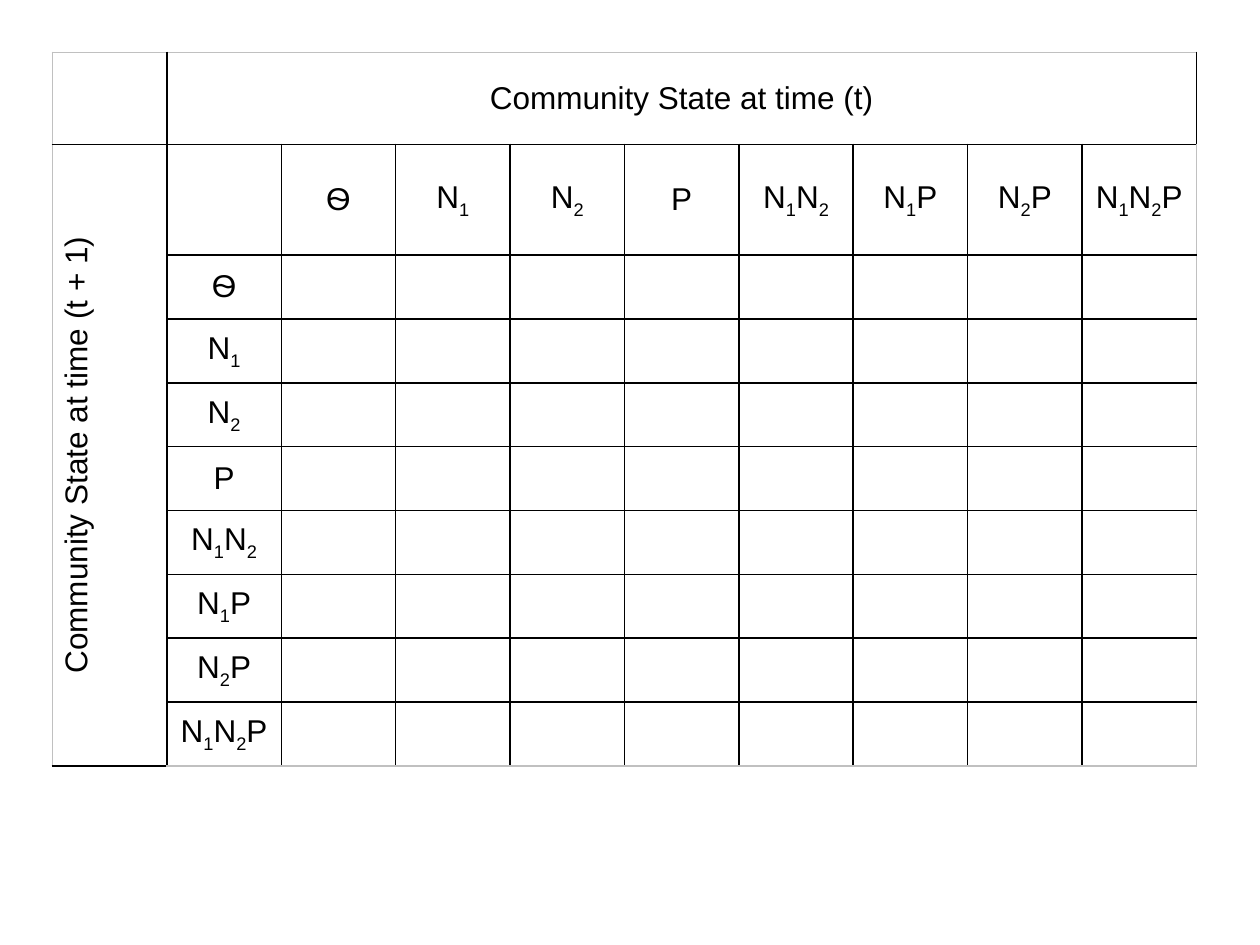
"""Builds a slide with an empty community state transition table."""
from lxml import etree
from pptx import Presentation, util as u
from pptx.dml.color import RGBColor
from pptx.enum import text
from pptx.oxml import ns

COLORS = {"ink": "000000", "frame": "C0C0C0"}
STATES = ["Ѳ", "N1", "N2", "P", "N1N2", "N1P", "N2P", "N1N2P"]
COL_WIDTH = 65.38
ROW_HEIGHTS = [52.5, 63.3] + [36.5] * len(STATES)


def write_cell(cell, label):
    """Write a centred label, setting its digits as subscripts when it is a state."""
    cell.vertical_anchor = text.MSO_ANCHOR.MIDDLE
    p = cell.text_frame.paragraphs[0]
    p.alignment = text.PP_ALIGN.CENTER
    for part in label if label in STATES else [label]:
        r = p.add_run()
        r.text = part
        if part.isdigit():
            r._r.get_or_add_rPr().set("baseline", "-25000")
    p.font.size = u.Pt(18)
    p.font.name = "Arial"
    p.font.color.rgb = RGBColor.from_string(COLORS["ink"])


def set_borders(cell, edges):
    """Draw the four borders of a cell, with the frame colour on the outer edges."""
    tc_pr = cell._tc.get_or_add_tcPr()
    for i, (side, outer) in enumerate(edges.items()):
        ln = etree.Element(ns.qn(f"a:ln{side}"), w=str(u.Pt(1)))
        fill = etree.SubElement(ln, ns.qn("a:solidFill"))
        color = COLORS["frame" if outer else "ink"]
        etree.SubElement(fill, ns.qn("a:srgbClr"), val=color)
        tc_pr.insert(i, ln)


def add_grid(s):
    """Add the unfilled, bordered table and return it."""
    rows, cols = len(ROW_HEIGHTS), len(STATES) + 2
    table = s.shapes.add_table(rows, cols, u.Pt(30), u.Pt(30),
                               u.Pt(COL_WIDTH * cols), u.Pt(sum(ROW_HEIGHTS))).table
    table.first_row = table.horz_banding = False
    for column in table.columns:
        column.width = u.Pt(COL_WIDTH)
    for row, height in zip(table.rows, ROW_HEIGHTS):
        row.height = u.Pt(height)
    for i in range(rows):
        for j in range(cols):
            cell = table.cell(i, j)
            cell.fill.background()
            set_borders(cell, {"L": j == 0, "R": j == cols - 1,
                               "T": i == 0, "B": i == rows - 1})
    return table


def fill_headers(table):
    """Merge and label the two axis headers, then label the states on both axes."""
    last_row, last_col = len(table.rows) - 1, len(table.columns) - 1
    across, down = table.cell(0, 1), table.cell(1, 0)
    across.merge(table.cell(0, last_col))
    down.merge(table.cell(last_row, 0))
    write_cell(across, "Community State at time (t)")
    write_cell(down, "Community State at time (t + 1)")
    down._tc.get_or_add_tcPr().set("vert", "vert270")
    for i, state in enumerate(STATES, start=2):
        write_cell(table.cell(1, i), state)
        write_cell(table.cell(i, 1), state)


def main():
    """Build and save the slide."""
    prs = Presentation()
    prs.slide_width, prs.slide_height = u.Pt(720), u.Pt(540)
    s = prs.slides.add_slide(prs.slide_layouts[6])
    fill_headers(add_grid(s))
    prs.save("out.pptx")


if __name__ == "__main__":
    main()
